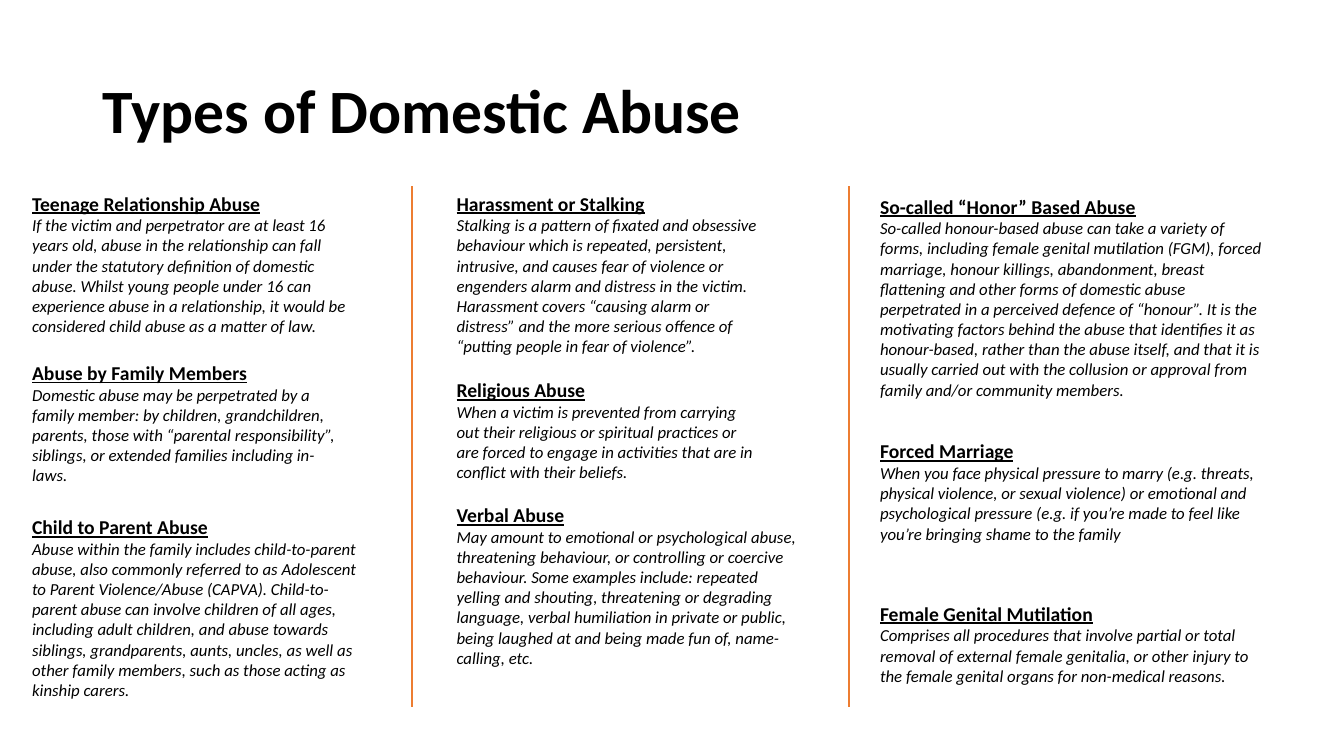
from dataclasses import dataclass

from lxml.etree import SubElement
from pptx import Presentation
from pptx.dml.color import RGBColor
from pptx.enum.shapes import MSO_CONNECTOR
from pptx.enum.text import MSO_ANCHOR, MSO_AUTO_SIZE, PP_ALIGN
from pptx.oxml.ns import qn
from pptx.util import Inches, Pt


@dataclass(frozen=True)
class Theme:
    font: str = "Calibri"
    text: RGBColor = RGBColor(0x00, 0x00, 0x00)
    accent: RGBColor = RGBColor(0xED, 0x7D, 0x31)
    title: int = 44
    heading: int = 14
    body: int = 12
    rule: float = 1.5


THEME = Theme()
TOP, BOTTOM = 1.85, 7.01
DIVIDERS = (4.09, 8.42)

# Each column: left edge, then (top, width, height, heading, body paragraphs)
COLUMNS = [
    (0.22, [
        (1.85, 3.32, 1.55, "Teenage Relationship Abuse", [
            "If the victim and perpetrator are at least 16 years old, abuse in the "
            "relationship can fall under the statutory definition of domestic abuse. "
            "Whilst young people under 16 can experience abuse in a relationship, it "
            "would be considered child abuse as a matter of law."]),
        (3.53, 3.32, 1.82, "Abuse by Family Members", [
            "Domestic abuse may be perpetrated by a family member: by children, "
            "grandchildren, parents, those with “parental responsibility”, siblings, "
            "or extended families including in-laws."]),
        (5.06, 3.53, 1.95, "Child to Parent Abuse", [
            "Abuse within the family includes child-to-parent abuse, also commonly "
            "referred to as Adolescent to Parent Violence/Abuse (CAPVA). "
            "Child-to-parent abuse can involve children of all ages, including adult "
            "children, and abuse towards siblings, grandparents, aunts, uncles, as "
            "well as other family members, such as those acting as kinship carers."]),
    ]),
    (4.43, [
        (1.85, 3.32, 1.75, "Harassment or Stalking", [
            "Stalking is a pattern of fixated and obsessive behaviour which is "
            "repeated, persistent, intrusive, and causes fear of violence or "
            "engenders alarm and distress in the victim.",
            "Harassment covers “causing alarm or distress” and the more serious "
            "offence of “putting people in fear of violence”."]),
        (3.7, 3.21, 1.14, "Religious Abuse", [
            "When a victim is prevented from carrying out their religious or "
            "spiritual practices or are forced to engage in activities that are in "
            "conflict with their beliefs."]),
        (4.94, 3.66, 1.75, "Verbal Abuse", [
            "May amount to emotional or psychological abuse, threatening behaviour, "
            "or controlling or coercive behaviour. Some examples include: repeated "
            "yelling and shouting, threatening or degrading language, verbal "
            "humiliation in private or public, being laughed at and being made fun "
            "of, name-calling, etc."]),
    ]),
    (8.63, [
        (1.88, 4.04, 2.46, "So-called “Honor” Based Abuse", [
            "So-called honour-based abuse can take a variety of forms, including "
            "female genital mutilation (FGM), forced marriage, honour killings, "
            "abandonment, breast flattening and other forms of domestic abuse "
            "perpetrated in a perceived defence of “honour”. It is the motivating "
            "factors behind the abuse that identifies it as honour-based, rather "
            "than the abuse itself, and that it is usually carried out with the "
            "collusion or approval from family and/or community members."]),
        (4.31, 3.99, 1.14, "Forced Marriage", [
            "When you face physical pressure to marry (e.g. threats, physical "
            "violence, or sexual violence) or emotional and psychological pressure "
            "(e.g. if you’re made to feel like you’re bringing shame to the family"]),
        (5.92, 4.04, 0.94, "Female Genital Mutilation", [
            "Comprises all procedures that involve partial or total removal of "
            "external female genitalia, or other injury to the female genital organs "
            "for non-medical reasons."]),
    ]),
]


def add_run(p, text, size, bold=False, italic=False, underline=False):
    r = p.add_run()
    r.text = text
    font = r.font
    font.name, font.size = THEME.font, Pt(size)
    font.bold, font.italic, font.underline = bold, italic, underline
    font.color.rgb = THEME.text


def add_title(s, text, x, y, w, h):
    sp = s.shapes.title
    sp.left, sp.top, sp.width, sp.height = map(Inches, (x, y, w, h))
    tf = sp.text_frame
    tf.vertical_anchor = MSO_ANCHOR.MIDDLE
    p = tf.paragraphs[0]
    p.alignment, p.line_spacing = PP_ALIGN.LEFT, 0.9
    add_run(p, text, THEME.title, bold=True)


def add_definition(s, x, y, w, h, heading, body):
    """Place an underlined heading with its italic explanation."""
    tf = s.shapes.add_textbox(*map(Inches, (x, y, w, h))).text_frame
    tf.word_wrap = True
    tf.auto_size = MSO_AUTO_SIZE.SHAPE_TO_FIT_TEXT
    add_run(tf.paragraphs[0], heading, THEME.heading, bold=True, underline=True)
    for text in body:
        add_run(tf.add_paragraph(), text, THEME.body, italic=True)


def add_column(s, x, definitions):
    for y, w, h, heading, body in definitions:
        add_definition(s, x, y, w, h, heading, body)


def add_divider(s, x, top, bottom):
    line = s.shapes.add_connector(
        MSO_CONNECTOR.STRAIGHT, *map(Inches, (x, top, x, bottom)))
    line.line.color.rgb = THEME.accent
    line.line.width = Pt(THEME.rule)
    SubElement(line._element.spPr, qn("a:effectLst"))


def main():
    prs = Presentation()
    prs.slide_width, prs.slide_height = Inches(13.33), Inches(7.5)
    s = prs.slides.add_slide(prs.slide_layouts[5])
    add_title(s, "Types of Domestic Abuse", 0.92, 0.4, 11.5, 1.45)
    for x, definitions in COLUMNS:
        add_column(s, x, definitions)
    for x in DIVIDERS:
        add_divider(s, x, TOP, BOTTOM)
    prs.save("out.pptx")


if __name__ == "__main__":
    main()
